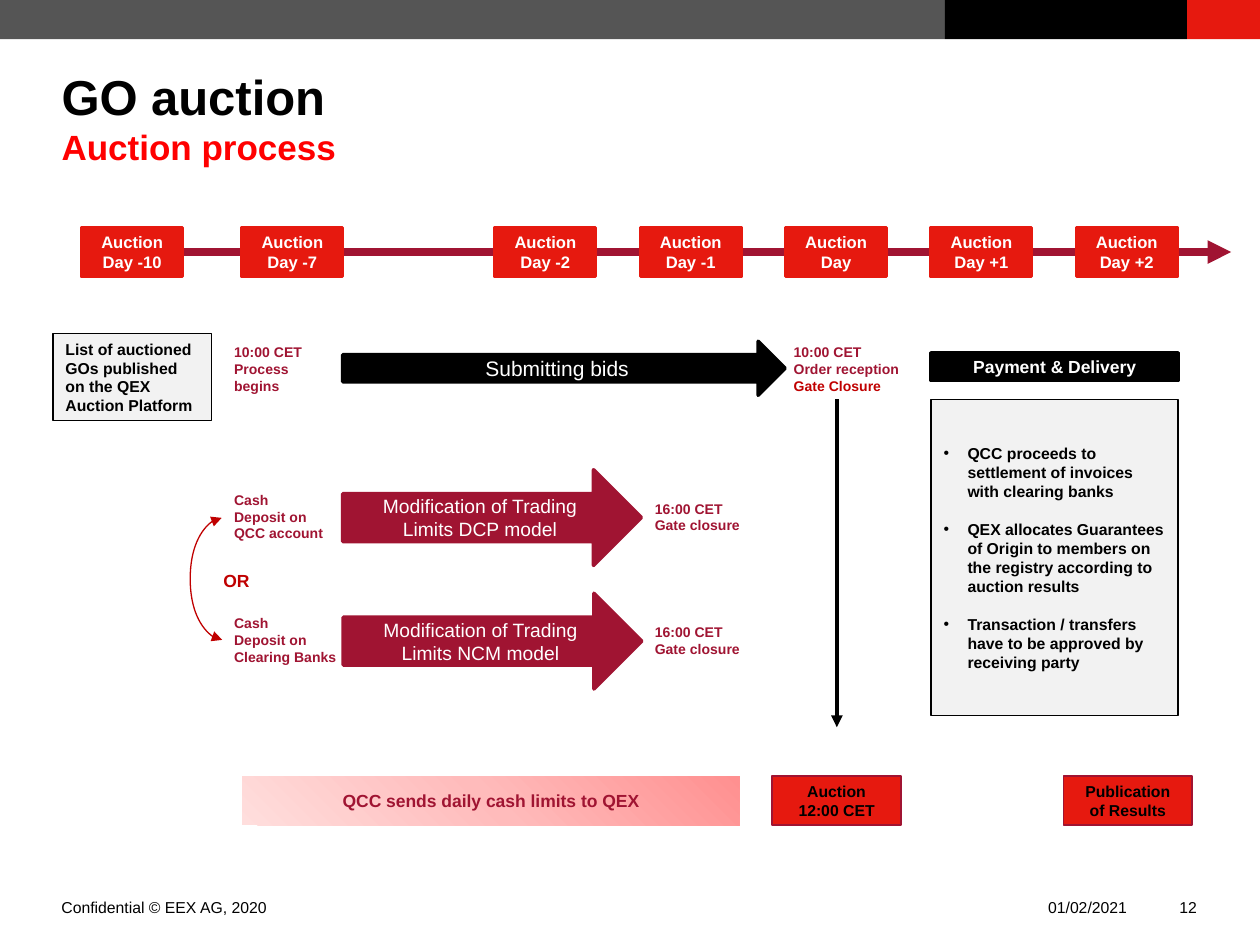
"""Build the GO auction process slide."""
from lxml.etree import SubElement
from pptx import Presentation
from pptx.dml.color import RGBColor
from pptx.enum.shapes import MSO_CONNECTOR, MSO_SHAPE
from pptx.enum.text import MSO_ANCHOR, MSO_AUTO_SIZE, PP_ALIGN
from pptx.oxml import parse_xml
from pptx.oxml.ns import nsdecls, qn
from pptx.util import Cm, Pt

RED = RGBColor(0xE6, 0x19, 0x0F)
BRIGHT_RED = RGBColor(0xFF, 0x00, 0x00)
DARK_RED = RGBColor(0xC0, 0x00, 0x00)
CRIMSON = RGBColor(0xA0, 0x14, 0x32)
BLACK = RGBColor(0x00, 0x00, 0x00)
WHITE = RGBColor(0xFF, 0xFF, 0xFF)
GREY = RGBColor(0x55, 0x55, 0x55)
PALE_GREY = RGBColor(0xF2, 0xF2, 0xF2)

presentation = Presentation()
presentation.slide_width = Cm(25.4)
presentation.slide_height = Cm(19.05)
slide = presentation.slides.add_slide(presentation.slide_layouts[1])
shapes = slide.shapes


def write(shape, *lines, size=9, color=BLACK, bold=True, align=PP_ALIGN.CENTER,
          anchor=MSO_ANCHOR.MIDDLE, margin=None, gap=0):
    frame = shape.text_frame
    frame.auto_size = MSO_AUTO_SIZE.NONE
    frame.word_wrap = True
    frame.vertical_anchor = anchor
    if margin is not None:
        frame.margin_left = frame.margin_right = margin
        frame.margin_top = frame.margin_bottom = margin
    frame.text = "\n".join(lines)
    for number, paragraph in enumerate(frame.paragraphs):
        paragraph.alignment = align
        paragraph.space_before = Pt(gap if number else 0)
        for run in paragraph.runs:
            run.font.name = "Arial"
            run.font.size = Pt(size)
            run.font.bold = bold
            run.font.color.rgb = color
    return frame.paragraphs


def add_box(left, top, width, height, fill, line=None, line_width=2, kind=MSO_SHAPE.RECTANGLE):
    shape = shapes.add_shape(kind, Cm(left), Cm(top), Cm(width), Cm(height))
    shape.shadow.inherit = False
    shape.fill.solid()
    shape.fill.fore_color.rgb = fill
    if line is None:
        shape.line.fill.background()
    else:
        shape.line.color.rgb = line
        shape.line.width = Pt(line_width)
    return shape


for left, width, color in [(23.93, 1.47, RED), (0, 19.05, GREY), (19.05, 4.88, BLACK)]:
    add_box(left, 0, width, 0.79, color)

title = shapes.title
title.left, title.top, title.width, title.height = Cm(1.24), Cm(1.35), Cm(22.89), Cm(2.49)
heading, subheading = write(title, "GO auction", "Auction process", size=28,
                            align=PP_ALIGN.LEFT, anchor=MSO_ANCHOR.TOP, margin=0)
subheading.runs[0].font.size = Pt(20)
subheading.runs[0].font.color.rgb = BRIGHT_RED

for left, width, text, align in [
    (1.24, 8.05, "Confidential © EEX AG, 2020", PP_ALIGN.LEFT),
    (21.13, 1.8, "01/02/2021", PP_ALIGN.LEFT),
    (23.29, 0.84, "12", PP_ALIGN.RIGHT),
]:
    footer = shapes.add_textbox(Cm(left), Cm(18.01), Cm(width), Cm(0.46))
    write(footer, text, bold=False, align=align, anchor=MSO_ANCHOR.BOTTOM, margin=0)

for kind, start, end, color, width, ends in [
    (MSO_CONNECTOR.STRAIGHT, (2.24, 5.08), (24.82, 5.08), CRIMSON, 4.5, ["tailEnd"]),
    (MSO_CONNECTOR.STRAIGHT, (16.87, 8.05), (16.87, 14.66), BLACK, 2.25, ["tailEnd"]),
    (MSO_CONNECTOR.CURVE, (4.47, 10.44), (4.48, 12.9), DARK_RED, 0.75, ["headEnd", "tailEnd"]),
]:
    connector = shapes.add_connector(kind, *map(Cm, start + end))
    connector.line.color.rgb = color
    connector.line.width = Pt(width)
    properties = connector._element.spPr
    for name in ends:
        SubElement(properties.find(qn("a:ln")), qn(f"a:{name}"), type="triangle")
    SubElement(properties, qn("a:effectLst"))
    if kind == MSO_CONNECTOR.CURVE:
        geometry = properties.find(qn("a:prstGeom"))
        adjustments = geometry.find(qn("a:avLst"))
        SubElement(adjustments, qn("a:gd"), name="adj1", fmla="val -6350000")

day_lefts = [1.65, 4.88] + [9.98 + 2.93 * step for step in range(5)]
days = ["Day -10", "Day -7", "Day -2", "Day -1", "Day", "Day +1", "Day +2"]
for left, day in zip(day_lefts, days):
    write(add_box(left, 4.59, 2.03, 0.99, RED, RED), f"Auction {day}", size=9.5, color=WHITE)

for left, top, width, height, color, text, size in [
    (6.91, 6.88, 8.92, 1.09, BLACK, "Submitting bids", 12),
    (6.91, 9.47, 6.02, 1.93, CRIMSON, "Modification of Trading Limits DCP model", 11),
    (6.92, 11.96, 6.02, 1.93, CRIMSON, "Modification of Trading Limits NCM model", 11),
]:
    arrow = add_box(left, top, width, height, color, color, kind=MSO_SHAPE.RIGHT_ARROW)
    write(arrow, text, size=size, color=WHITE, bold=False)

for left, top, width, height, lines in [
    (4.47, 6.81, 2.03, 1.27, ["10:00 CET", "Process begins"]),
    (15.75, 6.81, 2.64, 1.27, ["10:00 CET", "Order reception", "Gate Closure"]),
    (4.47, 9.78, 2.44, 1.27, ["Cash", "Deposit on QCC account"]),
    (4.47, 12.27, 2.64, 1.27, ["Cash", "Deposit on Clearing Banks"]),
    (12.95, 9.96, 2.34, 0.94, ["16:00 CET", "Gate closure"]),
    (12.95, 12.45, 2.34, 0.94, ["16:00 CET", "Gate closure"]),
]:
    label = shapes.add_textbox(Cm(left), Cm(top), Cm(width), Cm(height))
    paragraphs = write(label, *lines, size=8, color=CRIMSON, align=PP_ALIGN.LEFT,
                       anchor=MSO_ANCHOR.TOP)
    if lines[-1] == "Gate Closure":
        paragraphs[-1].runs[0].font.color.rgb = DARK_RED

choice = shapes.add_textbox(Cm(3.99), Cm(11.2), Cm(1.55), Cm(0.99))
write(choice, "OR", size=10, color=DARK_RED)

limits = add_box(4.88, 15.65, 10.03, 0.99, WHITE)
write(limits, "QCC sends daily cash limits to QEX", size=10, color=CRIMSON)
gradient = parse_xml(
    f'<a:gradFill {nsdecls("a")} rotWithShape="1"><a:gsLst>'
    '<a:gs pos="0"><a:srgbClr val="FF9090"/></a:gs>'
    '<a:gs pos="50000"><a:srgbClr val="FFBBBB"/></a:gs>'
    '<a:gs pos="100000"><a:srgbClr val="FFDEDD"/></a:gs></a:gsLst>'
    '<a:path path="circle"><a:fillToRect l="100000" b="100000"/></a:path></a:gradFill>'
)
limits_properties = limits._element.spPr
limits_properties.replace(limits_properties.find(qn("a:solidFill")), gradient)

for left, lines in [(15.57, ["Auction", "12:00 CET"]), (21.44, ["Publication of Results"])]:
    write(add_box(left, 15.65, 2.59, 0.99, RED, CRIMSON, 1), *lines)

write(add_box(18.77, 7.11, 4.98, 0.56, BLACK, BLACK), "Payment & Delivery", size=10, color=WHITE)
write(add_box(1.07, 6.73, 3.2, 1.75, PALE_GREY, BLACK, 0.75),
      "List of auctioned GOs published on the QEX Auction Platform", align=PP_ALIGN.LEFT)

delivery = slide.placeholders[1]
delivery.left, delivery.top, delivery.width, delivery.height = Cm(18.77), Cm(8.05), Cm(4.98), Cm(6.38)
delivery.fill.solid()
delivery.fill.fore_color.rgb = PALE_GREY
delivery.line.color.rgb = BLACK
delivery.line.width = Pt(0.75)
steps = write(
    delivery,
    "QCC proceeds to settlement of invoices with clearing banks",
    "QEX allocates Guarantees of Origin to members on the registry according to auction results",
    "Transaction / transfers have to be approved by receiving party",
    align=PP_ALIGN.LEFT, gap=11,
)
for paragraph in steps:
    paragraph_properties = paragraph._p.get_or_add_pPr()
    paragraph_properties.set("marL", str(Cm(0.48)))
    paragraph_properties.set("indent", str(-Cm(0.48)))
    SubElement(paragraph_properties, qn("a:buChar"), char="•")

presentation.save("out.pptx")
